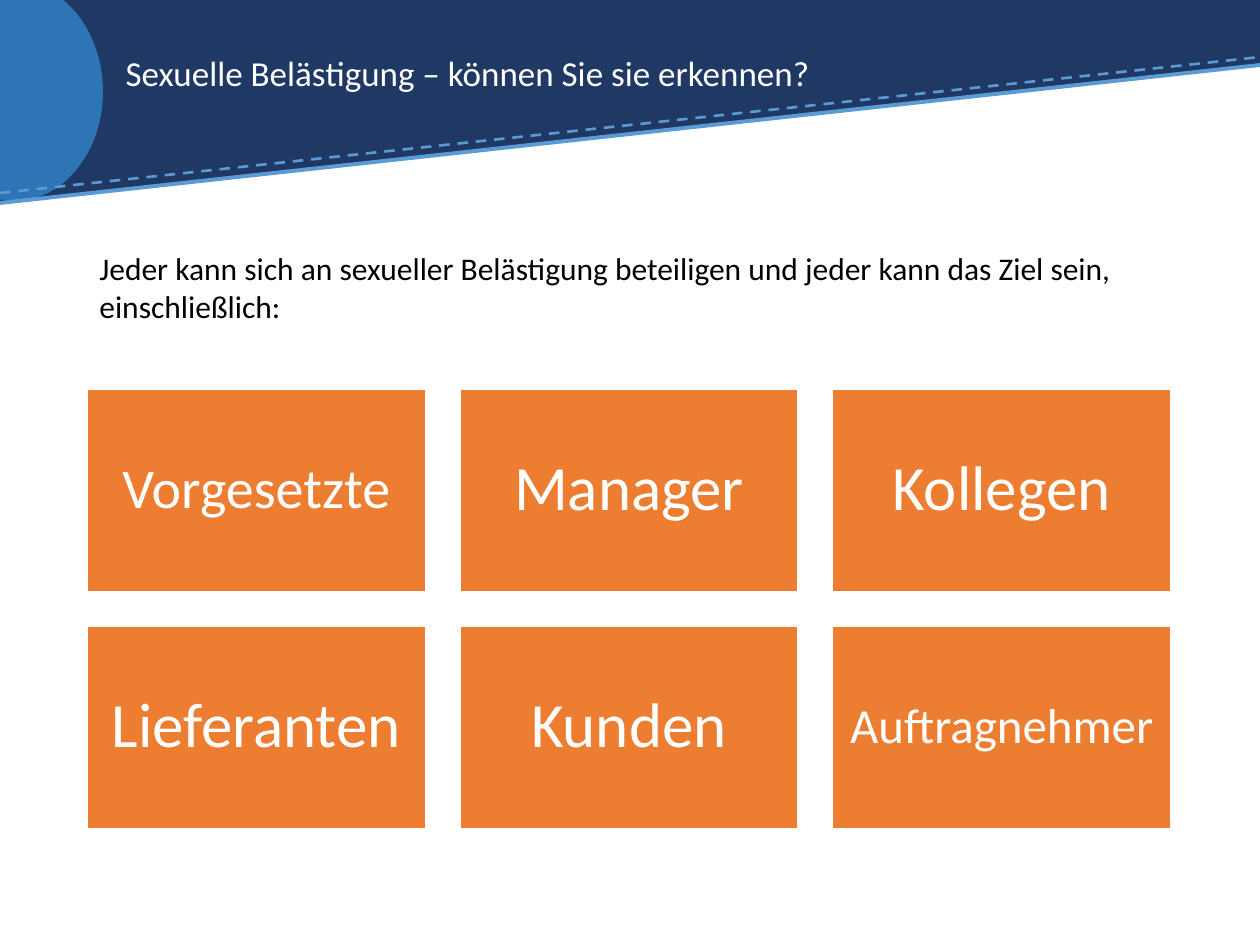
from lxml.etree import SubElement
from pptx import Presentation
from pptx.dml.color import RGBColor
from pptx.enum.dml import MSO_LINE_DASH_STYLE as Dash
from pptx.enum.shapes import MSO_CONNECTOR, MSO_SHAPE
from pptx.enum.text import MSO_ANCHOR, MSO_AUTO_SIZE, PP_ALIGN
from pptx.oxml.ns import qn
from pptx.util import Emu, Pt

PX_PER_INCH = 126
SLIDE_WIDTH, SLIDE_HEIGHT = 1260, 945
FONT = "Calibri"
COLORS = {
    "navy": "203864",
    "disc": "2E75B6",
    "stripe": "5B9BD5",
    "tile": "ED7D31",
    "white": "FFFFFF",
    "black": "000000",
}
GROUPS = [
    [("Vorgesetzte", 32), ("Manager", 36), ("Kollegen", 36)],
    [("Lieferanten", 36), ("Kunden", 36), ("Auftragnehmer", 28)],
]


def px(length):
    return Emu(round(length * 914400 / PX_PER_INCH))


def color(name):
    return RGBColor.from_string(COLORS[name])


def add_filled(slide, kind, box, fill, outline=None):
    shape = slide.shapes.add_shape(kind, *map(px, box))
    shape.shadow.inherit = False
    shape.fill.solid()
    shape.fill.fore_color.rgb = color(fill)
    if outline:
        shape.line.color.rgb = color(outline)
        shape.line.width = Pt(1)
    else:
        shape.line.fill.background()
    return shape


def add_stripe(slide, start, end, width, dash=None):
    stripe = slide.shapes.add_connector(
        MSO_CONNECTOR.STRAIGHT, *map(px, (*start, *end)))
    stripe.line.color.rgb = color("stripe")
    stripe.line.width = Pt(width)
    if dash:
        stripe.line.dash_style = dash
    SubElement(stripe.element.spPr, qn("a:effectLst"))


def write(paragraph, text, size, color_name, align=PP_ALIGN.LEFT):
    paragraph.alignment = align
    run = paragraph.add_run()
    run.text = text
    run.font.name = FONT
    run.font.size = Pt(size)
    run.font.color.rgb = color(color_name)


def add_header(slide, box):
    """Draw the slanted band with its disc and stripes, sloping from left to right."""
    left, top, width, height = box
    right, bar = left + width, 65
    add_filled(slide, MSO_SHAPE.RECTANGLE, (left, top, width, bar), "navy")
    wedge = add_filled(slide, MSO_SHAPE.RIGHT_TRIANGLE,
                       (left, top + bar, width, height - bar), "navy")
    wedge.element.spPr.get_or_add_xfrm().set("flipV", "1")
    add_filled(slide, MSO_SHAPE.OVAL, (left - 74, top - 18, 177, 219), "disc")
    add_stripe(slide, (left, top + height - 9), (right, top + bar - 8), 1.5, Dash.DASH)
    add_stripe(slide, (left, top + height + 1), (right, top + bar), 2.25)


def add_title(slide, box, text):
    title = slide.shapes.title
    title.left, title.top, title.width, title.height = map(px, box)
    title.element.getparent().append(title.element)  # in front of the header
    frame = title.text_frame
    frame.auto_size = MSO_AUTO_SIZE.NONE
    frame.vertical_anchor = MSO_ANCHOR.MIDDLE
    frame.paragraphs[0].line_spacing = 0.9
    write(frame.paragraphs[0], text, 20, "white")


def add_intro(slide, box, text):
    frame = slide.shapes.add_textbox(*map(px, box)).text_frame
    frame.word_wrap = True
    frame.auto_size = MSO_AUTO_SIZE.SHAPE_TO_FIT_TEXT
    write(frame.paragraphs[0], text, 18, "black")


def add_tiles(slide, box, rows, gap):
    left, top, width, height = box
    tile_width = (width + gap) / len(rows[0]) - gap
    tile_height = (height + gap) / len(rows) - gap
    for row, tiles in enumerate(rows):
        for column, (label, size) in enumerate(tiles):
            tile = add_filled(
                slide, MSO_SHAPE.RECTANGLE,
                (left + column * (tile_width + gap), top + row * (tile_height + gap),
                 tile_width, tile_height), "tile", "white")
            frame = tile.text_frame
            frame.word_wrap = True
            frame.vertical_anchor = MSO_ANCHOR.MIDDLE
            inset = Pt(size * 0.3)
            frame.margin_left = frame.margin_right = inset
            frame.margin_top = frame.margin_bottom = inset
            frame.paragraphs[0].line_spacing = 0.9
            write(frame.paragraphs[0], label, size, "white", PP_ALIGN.CENTER)


def main():
    presentation = Presentation()
    presentation.slide_width = px(SLIDE_WIDTH)
    presentation.slide_height = px(SLIDE_HEIGHT)
    slide = presentation.slides.add_slide(presentation.slide_layouts[5])
    add_header(slide, (0, 0, SLIDE_WIDTH, 202))
    add_title(slide, (113, 25, 1017, 101),
              "Sexuelle Belästigung – können Sie sie erkennen?")
    add_tiles(slide, (87, 389, 1084, 440), GROUPS, 34)
    add_intro(slide, (87, 243, 1142, 88),
              "Jeder kann sich an sexueller Belästigung beteiligen und jeder kann "
              "das Ziel sein, einschließlich:")
    presentation.save("out.pptx")


if __name__ == "__main__":
    main()
